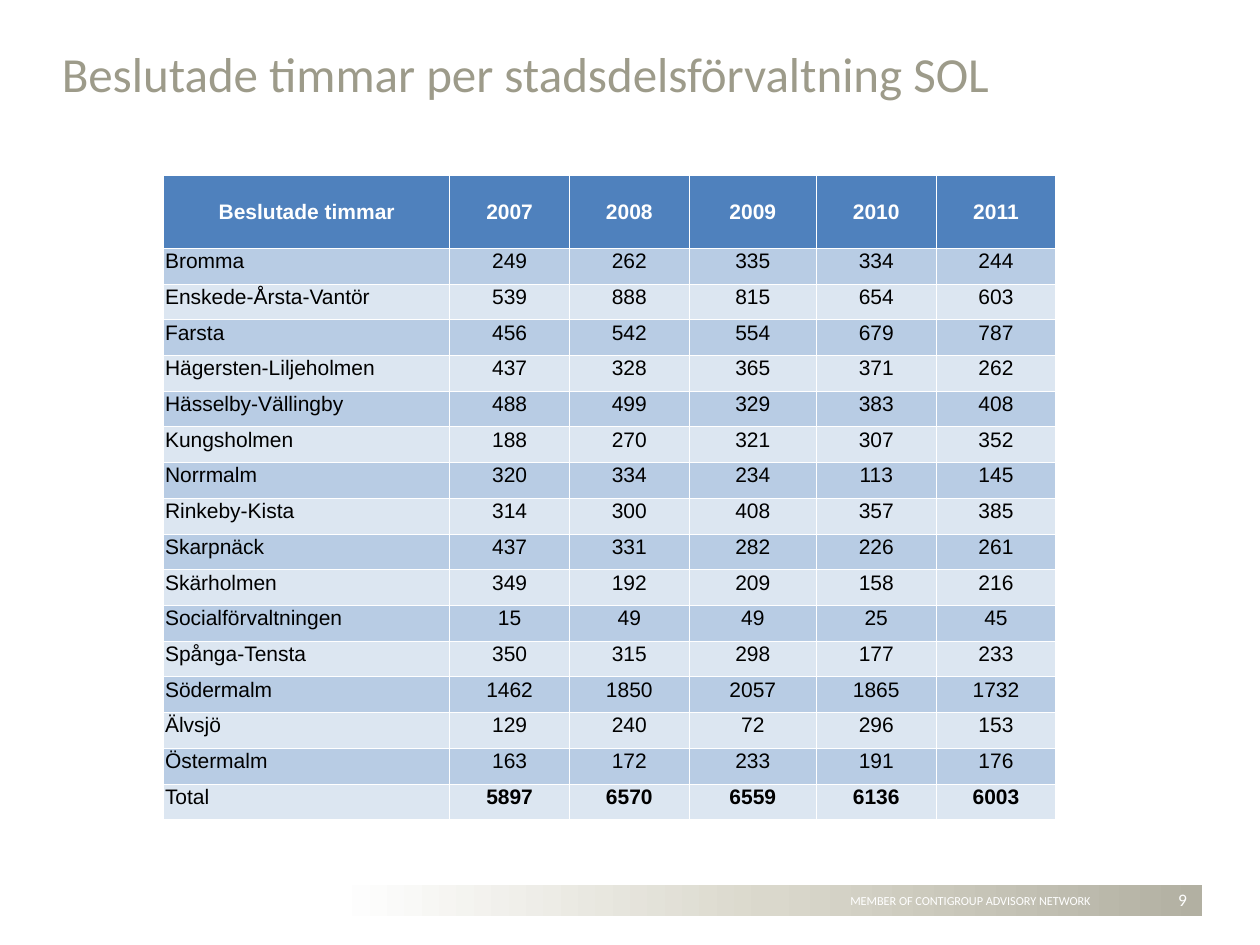
import copy
import dataclasses

import pptx
import pptx.dml.color
import pptx.enum.shapes
import pptx.enum.text
import pptx.oxml
import pptx.oxml.ns
import pptx.util

Inches = pptx.util.Inches
Pt = pptx.util.Pt
RGB = pptx.dml.color.RGBColor.from_string
ALIGN = pptx.enum.text.PP_ALIGN
ANCHOR = pptx.enum.text.MSO_ANCHOR
qn = pptx.oxml.ns.qn


@dataclasses.dataclass(frozen=True)
class Theme:
    heading_font: str = "Calibri"
    table_font: str = "Arial"
    title_size: float = 28
    table_size: float = 12
    number_size: float = 10
    footer_size: float = 7
    title: str = "9D9B8A"
    white: str = "FFFFFF"
    black: str = "000000"
    header: str = "4F81BD"
    bands: tuple = ("B8CCE4", "DCE6F1")
    footer_stops: tuple = ((0, "B2B0A2"), (0.5, "DAD8CC"), (1, "FFFFFF"))
    border: float = 0.5


HEADINGS = ["Beslutade timmar", 2007, 2008, 2009, 2010, 2011]
DISTRICTS = [
    ["Bromma", 249, 262, 335, 334, 244],
    ["Enskede-Årsta-Vantör", 539, 888, 815, 654, 603],
    ["Farsta", 456, 542, 554, 679, 787],
    ["Hägersten-Liljeholmen", 437, 328, 365, 371, 262],
    ["Hässelby-Vällingby", 488, 499, 329, 383, 408],
    ["Kungsholmen", 188, 270, 321, 307, 352],
    ["Norrmalm", 320, 334, 234, 113, 145],
    ["Rinkeby-Kista", 314, 300, 408, 357, 385],
    ["Skarpnäck", 437, 331, 282, 226, 261],
    ["Skärholmen", 349, 192, 209, 158, 216],
    ["Socialförvaltningen", 15, 49, 49, 25, 45],
    ["Spånga-Tensta", 350, 315, 298, 177, 233],
    ["Södermalm", 1462, 1850, 2057, 1865, 1732],
    ["Älvsjö", 129, 240, 72, 296, 153],
    ["Östermalm", 163, 172, 233, 191, 176],
    ["Total", 5897, 6570, 6559, 6136, 6003],
]


class SlideBuilder:
    def __init__(self, prs, theme):
        self.theme = theme
        self.s = prs.slides.add_slide(prs.slide_layouts[5])

    def set_text(self, tf, text, font, size, color, align=ALIGN.LEFT, bold=False):
        tf.text = str(text)
        p = tf.paragraphs[0]
        p.alignment = align
        r = p.runs[0]
        r.font.name = font
        r.font.size = Pt(size)
        r.font.bold = bold
        r.font.color.rgb = RGB(color)

    def title(self, text, left, top, width, height):
        sp = self.s.shapes.title
        sp.left, sp.top = Inches(left), Inches(top)
        sp.width, sp.height = Inches(width), Inches(height)
        tf = sp.text_frame
        tf.vertical_anchor = ANCHOR.BOTTOM
        self.set_text(tf, text, self.theme.heading_font, self.theme.title_size, self.theme.title)

    def text(self, text, left, top, width, height, size, align=ALIGN.LEFT, anchor=ANCHOR.TOP):
        sp = self.s.shapes.add_textbox(Inches(left), Inches(top), Inches(width), Inches(height))
        tf = sp.text_frame
        tf.word_wrap = True
        tf.vertical_anchor = anchor
        self.set_text(tf, text, self.theme.heading_font, size, self.theme.white, align)

    def gradient_bar(self, left, top, width, height):
        sp = self.s.shapes.add_shape(
            pptx.enum.shapes.MSO_SHAPE.RECTANGLE,
            Inches(left), Inches(top), Inches(width), Inches(height))
        sp.shadow.inherit = False
        sp.line.fill.background()
        sp.fill.gradient()
        sp.fill.gradient_angle = 180
        stops = sp._element.spPr.find(".//" + qn("a:gsLst"))
        stops.append(copy.deepcopy(stops[-1]))
        for stop, (position, color) in zip(sp.fill.gradient_stops, self.theme.footer_stops):
            stop.position = position
            stop.color.rgb = RGB(color)

    def cell_borders(self, cell):
        tcPr = cell._tc.get_or_add_tcPr()
        for i, side in enumerate(("lnL", "lnR", "lnT", "lnB")):
            tcPr.insert(i, pptx.oxml.parse_xml(
                f'<a:{side} xmlns:a="http://schemas.openxmlformats.org/drawingml/2006/main" '
                f'w="{Pt(self.theme.border)}"><a:solidFill><a:srgbClr val="{self.theme.white}"/>'
                f'</a:solidFill></a:{side}>'))

    def cell(self, cell, value, fill, color, align, anchor, bold):
        cell.margin_left = cell.margin_right = cell.margin_top = Inches(0.01)
        cell.margin_bottom = 0
        cell.vertical_anchor = anchor
        cell.fill.solid()
        cell.fill.fore_color.rgb = RGB(fill)
        self.cell_borders(cell)
        self.set_text(cell.text_frame, value, self.theme.table_font, self.theme.table_size,
                      color, align, bold)

    def table(self, rows, left, top, widths, header_height, height):
        th = self.theme
        table = self.s.shapes.add_table(
            len(rows), len(widths), Inches(left), Inches(top),
            Inches(sum(widths)), Inches(height)).table
        for column, width in zip(table.columns, widths):
            column.width = Inches(width)
        body_height = (height - header_height) / (len(rows) - 1)
        for i, values in enumerate(rows):
            header = i == 0
            total = i == len(rows) - 1
            table.rows[i].height = Inches(header_height if header else body_height)
            for j, value in enumerate(values):
                self.cell(
                    table.cell(i, j), value,
                    fill=th.header if header else th.bands[(i - 1) % 2],
                    color=th.white if header else th.black,
                    align=ALIGN.CENTER if header or j else ALIGN.LEFT,
                    anchor=ANCHOR.MIDDLE if header else ANCHOR.TOP,
                    bold=header or (total and j > 0))


def main():
    prs = pptx.Presentation()
    prs.slide_width, prs.slide_height = Inches(10), Inches(7.5)
    theme = Theme()
    slide = SlideBuilder(prs, theme)
    slide.gradient_bar(2.66, 7.02, 6.88, 0.25)
    slide.text("MEMBER OF CONTIGROUP ADVISORY NETWORK", 6.65, 7.04, 2.61, 0.22, theme.footer_size)
    slide.title("Beslutade timmar per stadsdelsförvaltning SOL", 0.39, 0.07, 8.29, 0.79)
    slide.text("9", 9.06, 7.01, 0.46, 0.25, theme.number_size, ALIGN.RIGHT, ANCHOR.MIDDLE)
    slide.table([HEADINGS, *DISTRICTS], 1.3, 1.39, [2.27, 0.95, 0.95, 1.01, 0.95, 0.95], 0.58, 5.12)
    prs.save("out.pptx")


if __name__ == "__main__":
    main()
